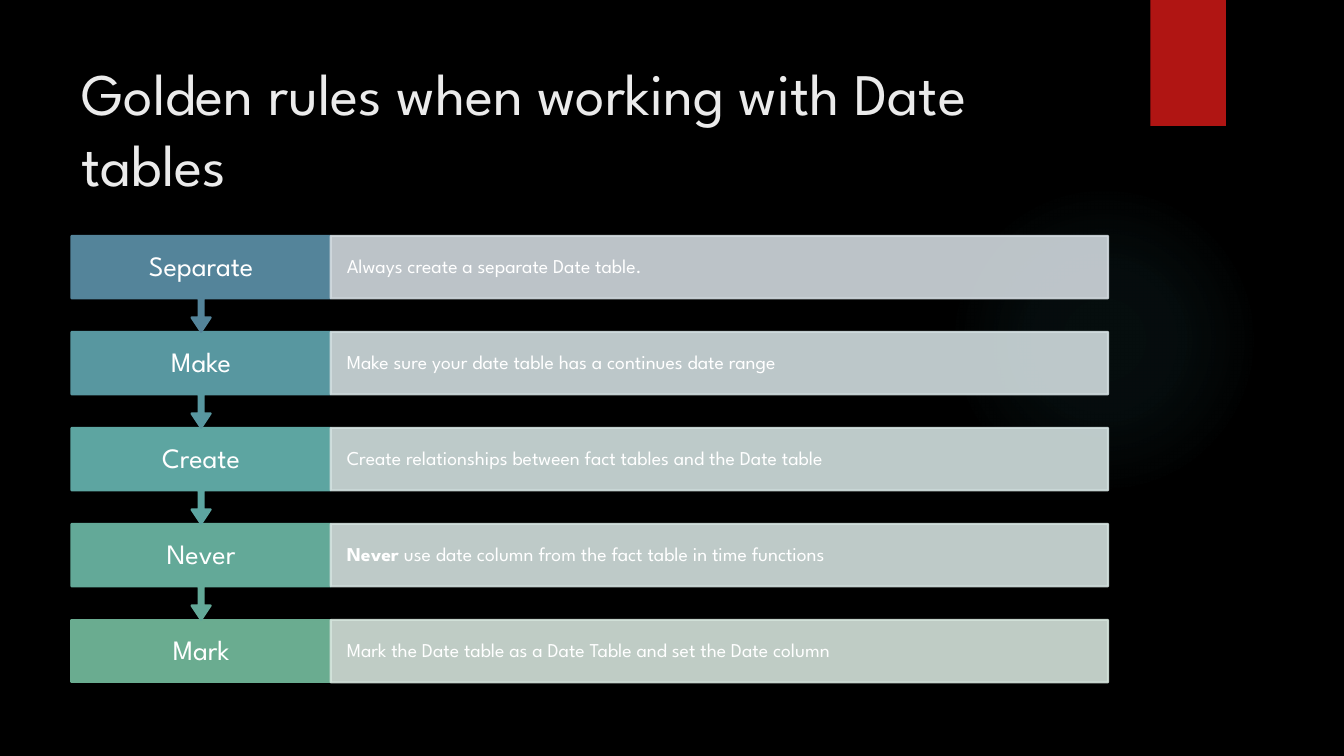
from lxml import etree
from pptx import Presentation
from pptx.dml.color import RGBColor
from pptx.enum.shapes import MSO_SHAPE as SHAPE
from pptx.enum.text import MSO_ANCHOR as ANCHOR, PP_ALIGN as ALIGN
from pptx.oxml import parse_xml
from pptx.oxml.ns import nsdecls, qn
from pptx.util import Inches, Pt

FONT = "League Spartan"
BLACK = RGBColor(0x00, 0x00, 0x00)
WHITE = RGBColor(0xFF, 0xFF, 0xFF)
TITLE_GREY = RGBColor(0xEB, 0xEB, 0xEB)
RED = RGBColor(0xB0, 0x15, 0x13)
GLOW = RGBColor(0x50, 0xB9, 0xC1)

# Keyword, its colour, detail colour, detail runs as (text, bold)
RULES = [
    ("Separate", RGBColor(0x54, 0x84, 0x9A), RGBColor(0xD1, 0xD9, 0xDE),
     [("Always create a separate Date table.", False)]),
    ("Make", RGBColor(0x58, 0x97, 0xA0), RGBColor(0xD1, 0xDD, 0xDF),
     [("Make sure your date table has a continues date range", False)]),
    ("Create", RGBColor(0x5D, 0xA5, 0xA1), RGBColor(0xD2, 0xE0, 0xDF),
     [("Create relationships between fact tables and the Date table", False)]),
    ("Never", RGBColor(0x63, 0xA9, 0x98), RGBColor(0xD3, 0xE1, 0xDE),
     [("Never", True),
      (" use date column from the fact table in time functions", False)]),
    ("Mark", RGBColor(0x6A, 0xAC, 0x90), RGBColor(0xD4, 0xE3, 0xDB),
     [("Mark the Date table as a Date Table and set the Date column", False)]),
]


def add_box(slide, kind, box, color, outlined=False):
    s = slide.shapes.add_shape(kind, *(Inches(v) for v in box))
    s.shadow.inherit = False
    s.fill.solid()
    s.fill.fore_color.rgb = color
    if outlined:
        s.line.color.rgb = color
        s.line.width = Pt(1.5)
    else:
        s.line.fill.background()
    return s


def set_opacity(s, percent):
    """Apply one opacity to both the fill and the outline."""
    for color in s._element.spPr.iter(qn("a:srgbClr")):
        etree.SubElement(color, qn("a:alpha"), val=str(percent * 1000))


def write(s, runs, size, color, align=ALIGN.LEFT, inset=(0.1, 0.05), spacing=1.0):
    tf = s.text_frame
    tf.word_wrap = True
    tf.vertical_anchor = ANCHOR.MIDDLE
    tf.margin_left = tf.margin_right = Inches(inset[0])
    tf.margin_top = tf.margin_bottom = Inches(inset[1])
    p = tf.paragraphs[0]
    p.alignment = align
    p.line_spacing = spacing
    for text, bold in runs:
        r = p.add_run()
        r.text = text
        r.font.name = FONT
        r.font.size = Pt(size)
        r.font.bold = bold
        r.font.color.rgb = color


def add_glow(slide, box):
    """Place a circle that fades out from its centre."""
    s = add_box(slide, SHAPE.OVAL, box, GLOW)
    stops = "".join(
        f'<a:gs pos="{pos * 1000}"><a:srgbClr val="{GLOW}">'
        f'<a:alpha val="{alpha * 1000}"/></a:srgbClr></a:gs>'
        for pos, alpha in [(0, 7), (36, 6), (69, 0)])
    gradient = parse_xml(
        f'<a:gradFill {nsdecls("a")}><a:gsLst>{stops}</a:gsLst>'
        '<a:path path="circle"><a:fillToRect l="50000" t="50000" '
        'r="50000" b="50000"/></a:path></a:gradFill>')
    spPr = s._element.spPr
    spPr.replace(spPr.find(qn("a:solidFill")), gradient)


def add_title(slide, box):
    s = slide.shapes.add_textbox(*(Inches(v) for v in box))
    write(s, [("Golden rules when working with Date tables", False)], 42, TITLE_GREY)


def add_rules(slide, box):
    """Stack the rules, each keyword pointing down to the next."""
    left, top, width, height = box
    bar = 0.62
    pitch = (height - bar) / (len(RULES) - 1)
    key_width = width / 4
    for i, (keyword, color, pale, detail) in reversed(list(enumerate(RULES))):
        y = top + i * pitch
        if i == len(RULES) - 1:
            key = add_box(slide, SHAPE.RECTANGLE, (left, y, key_width, bar), color, True)
        else:
            key = add_box(slide, SHAPE.DOWN_ARROW_CALLOUT,
                          (left, y, key_width, pitch), color, True)
            for n, value in enumerate((0.05, 0.1, 0.15, 0.65)):
                key.adjustments[n] = value
        write(key, [(keyword, False)], 20, WHITE, ALIGN.CENTER, (0.18, 0.16), 0.9)

        s = add_box(slide, SHAPE.RECTANGLE,
                    (left + key_width, y, width - key_width, bar), pale, True)
        set_opacity(s, 90)
        write(s, detail, 14, WHITE, inset=(0.16, 0.19), spacing=0.9)


def main():
    prs = Presentation()
    prs.slide_width, prs.slide_height = Inches(13.33), Inches(7.5)
    slide = prs.slides.add_slide(prs.slide_layouts[6])
    slide.background.fill.solid()
    slide.background.fill.fore_color.rgb = BLACK
    add_glow(slide, (9.41, 1.83, 3.08, 3.08))
    add_box(slide, SHAPE.RECTANGLE, (11.41, 0, 0.75, 1.25), RED)
    add_title(slide, (0.71, 0.5, 10.29, 1.53))
    add_rules(slide, (0.71, 2.34, 10.28, 4.43))
    prs.save("out.pptx")


if __name__ == "__main__":
    main()
